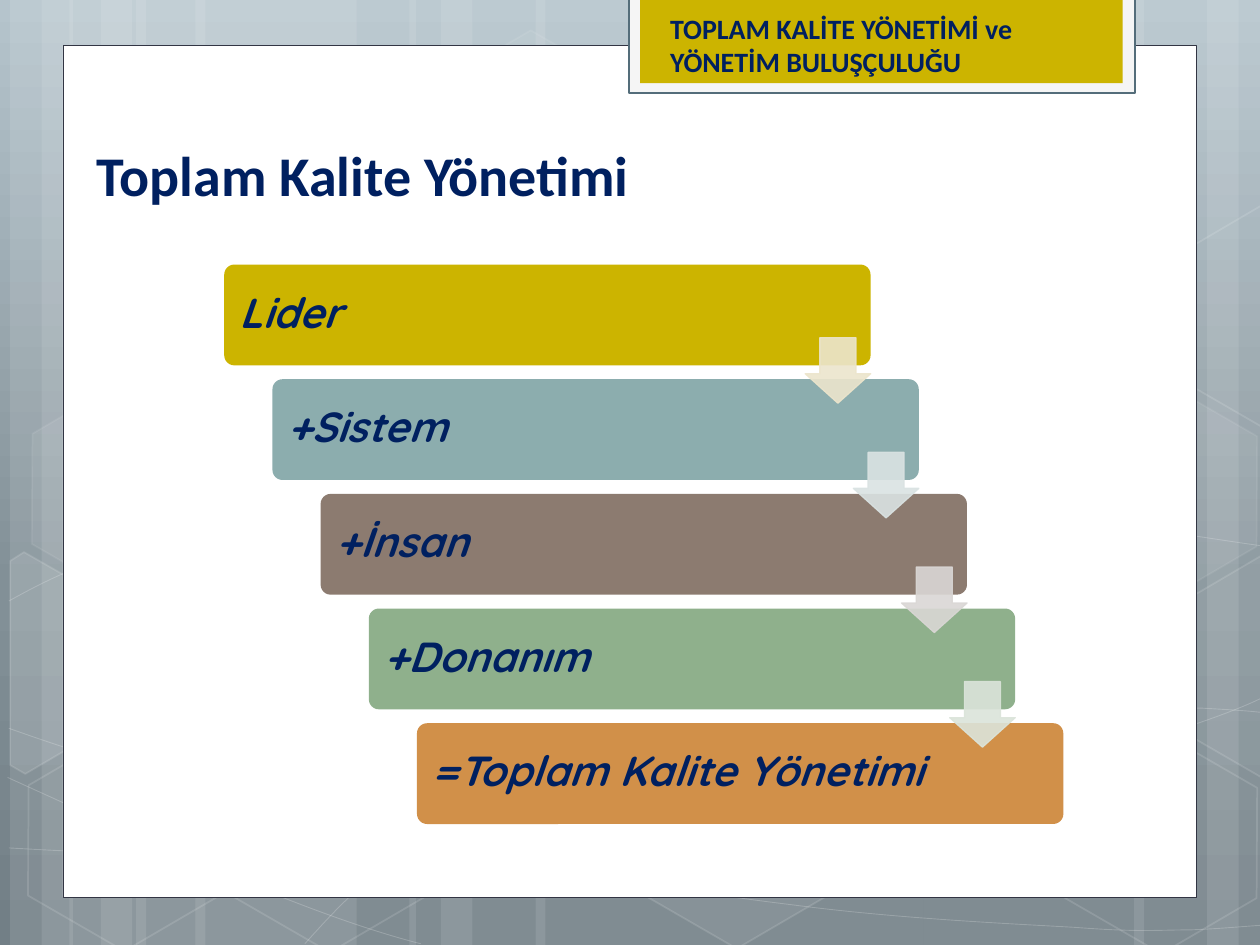
"""Build a slide with five stepped bars that add up to total quality management."""
import math
from copy import deepcopy

from lxml import etree
from pptx import Presentation
from pptx import util as u
from pptx.dml.color import RGBColor
from pptx.enum import shapes, text
from pptx.oxml.ns import qn

WIDE, HIGH = 10, 7.5
INK = {"white": "FFFFFF", "navy": "002060", "gold": "CCB400", "frame": "323543",
       "mist": "F5F5F5", "slate": "546D7A"}
SKY = [(0, "B5C4CC"), (62, "829097"), (100, "727F86")]
STEPS = [("Lider", "CCB400", "ECE5CC"),
         ("+Sistem", "8CADAE", "DAE3E3"),
         ("+İnsan", "8C7B70", "DAD7D5"),
         ("+Donanım", "8FB08C", "DBE4DA"),
         ("=Toplam Kalite Yönetimi", "D19049", None)]
HEAD = "TOPLAM KALİTE YÖNETİMİ ve YÖNETİM BULUŞÇULUĞU"
TITLE = "Toplam Kalite Yönetimi"
BANDS = [(1.08, 1.75, 0), (0.08, 0.5, 0), (0.33, 0.83, 0), (1.55, 1.75, 0), (0.55, 0.5, 0),
         (0.8, 0.83, 0), (7.33, 1.75, 180), (9.58, 0.5, 180), (9, 0.83, 180),
         (4.25, 3.08, 0), (3.25, 0.5, 0), (3.5, 0.83, 0)]
WAVES = [
    [(0.07, 6.73), (0.61, 6.76), (1.15, 6.79), (1.9, 6.78), (2.65, 6.77), (3.58, 6.75),
     (4.58, 6.65), (5.58, 6.55), (7, 6.36), (7.92, 6.17), (8.83, 5.98), (9.77, 5.68), (10.07, 5.51)],
    [(0.07, 4.77), (0.36, 4.61), (0.65, 4.46), (1.21, 4.31), (1.78, 4.16), (2.59, 3.94),
     (3.47, 3.87), (4.36, 3.8), (5.44, 3.79), (6.54, 3.87), (7.64, 3.95), (9.47, 4.26), (10.07, 4.34)],
    [(0.06, 6.17), (1.27, 6.72), (2.47, 7.27), (3.34, 7.49)],
    [(0.07, 5.78), (0.38, 5.89), (0.7, 6), (1.28, 6.16), (1.86, 6.31), (2.73, 6.56),
     (3.57, 6.73), (4.4, 6.9), (5.45, 7.08), (6.28, 7.18), (7.11, 7.29), (8, 7.33),
     (8.53, 7.36), (9.05, 7.4), (9.19, 7.38), (9.45, 7.38), (9.71, 7.37), (9.89, 7.35), (10.07, 7.34)],
    [(2.42, 7.49), (2.6, 7.29), (2.78, 7.09), (3.02, 6.91), (3.26, 6.73), (3.6, 6.53),
     (3.88, 6.39), (4.16, 6.25), (4.33, 6.19), (4.7, 6.09), (5.06, 5.99), (5.73, 5.85),
     (6.08, 5.78), (6.44, 5.71), (6.49, 5.71), (6.8, 5.69), (7.11, 5.66), (7.6, 5.63),
     (7.94, 5.62), (8.29, 5.61), (8.86, 5.62), (8.86, 5.62), (9.08, 5.62), (9.3, 5.62),
     (9.53, 5.62), (9.71, 5.63), (9.88, 5.64), (9.97, 5.65), (10.06, 5.66), (10.03, 5.65), (10.06, 5.66)]]
TILT = 30
CELLS = [(3.34, 0.36, 4, 8), (4.97, 5.89, 6, 12), (0.11, 5.91, 0, 12), (0.14, 3.12, 7, 8),
         (1.74, 5.92, 0, 12), (7.53, 4.53, 10, 12), (8.34, 5.93, 0, 12), (8.34, 3.14, 7, 8)]
CUTS = [((0.36, 5.35), 10,
         [(0.08, 4.45), (0.19, 4.38), (0.96, 4.82), (0.95, 5.7), (0.2, 6.14), (0.08, 6.07)]),
        ((9.85, 5.2), 4,
         [(9.26, 4.85), (10.01, 4.41), (10.09, 4.46), (10.09, 6.13), (10.02, 6.17), (9.26, 5.73)]),
        ((9.85, 2.41), 0,
         [(9.26, 2.07), (10.01, 1.63), (10.1, 1.68), (10.09, 3.35), (10.02, 3.39), (9.26, 2.95)])]

deck = Presentation()
deck.slide_width, deck.slide_height = u.Inches(WIDE), u.Inches(HIGH)
slide = deck.slides.add_slide(deck.slide_layouts[6])
KIND = shapes.MSO_SHAPE


def tint(fill, color, alpha):
    fill.solid()
    fill.fore_color.rgb = RGBColor.from_string(color)
    if alpha < 100:
        node = fill._xPr.find(qn("a:solidFill"))[0]
        etree.SubElement(node, qn("a:alpha")).set("val", str(alpha * 1000))


def style(shape, fill=None, alpha=100, line=None, width=1, clear=100):
    shape.shadow.inherit = False
    if fill and alpha:
        tint(shape.fill, fill, alpha)
    else:
        shape.fill.background()
    if line:
        shape.line.width = u.Pt(width)
        tint(shape.line.fill, line, clear)
    else:
        shape.line.fill.background()


def draw(kind, box, adjust=(), turn=0, **look):
    shape = slide.shapes.add_shape(kind, *map(u.Inches, box))
    for i, val in enumerate(adjust):
        shape.adjustments[i] = val
    shape.rotation = turn
    style(shape, **look)


def trace(points, close, **look):
    spots = [(u.Inches(x), u.Inches(y)) for x, y in points]
    pen = slide.shapes.build_freeform(*spots[0])
    pen.add_line_segments(spots[1:], close=close)
    shape = pen.convert_to_shape()
    style(shape, **look)
    return shape


def bend(shape):
    route = shape._element.find(".//" + qn("a:path"))
    legs = route.findall(qn("a:lnTo"))
    for k in range(0, len(legs), 3):
        curve = etree.SubElement(route, qn("a:cubicBezTo"))
        for leg in legs[k:k + 3]:
            curve.append(leg[0])
            route.remove(leg)


def spin(point, hub, angle):
    x, y = point[0] - hub[0], point[1] - hub[1]
    cos, sin = math.cos(math.radians(angle)), math.sin(math.radians(angle))
    return hub[0] + x * cos - y * sin, hub[1] + x * sin + y * cos


def write(words, box, size, font="Calibri", italic=None):
    frame = slide.shapes.add_textbox(*map(u.Inches, box)).text_frame
    frame.word_wrap = True
    frame.text = words
    face = frame.paragraphs[0].runs[0].font
    face.name, face.size, face.bold, face.italic = font, u.Pt(size), True, italic
    face.color.rgb = RGBColor.from_string(INK["navy"])
    return frame


def paint():
    fill = slide.background.fill
    fill.gradient()
    fill.gradient_angle = 270
    stops = slide._element.find(".//" + qn("a:gsLst"))
    stops.append(deepcopy(stops[-1]))
    for stop, (place, color) in zip(fill.gradient_stops, SKY):
        stop.position = place / 100
        stop.color.rgb = RGBColor.from_string(color)


def adorn():
    white = INK["white"]
    for left, width, turn in BANDS:
        draw(KIND.RECTANGLE, (left, 0, width, HIGH), turn=turn, fill=white, alpha=10)
    for wave in WAVES:
        bend(trace(wave, False, line=white, width=0.5, clear=20))
    for left, top, alpha, clear in CELLS:
        draw(KIND.HEXAGON, (left, top, 1.75, 1.52), (0.285, 1.155), TILT,
             fill=white, alpha=alpha, line=white, clear=clear)
    for hub, alpha, points in CUTS:
        flat = [spin(point, hub, -TILT) for point in points]
        trace(flat, True, fill=white, alpha=alpha, line=white, clear=12).rotation = TILT
    draw(KIND.RECTANGLE, (0.5, 0.36, 9, 6.76), fill=white, line=INK["frame"], width=0.5)
    draw(KIND.RECTANGLE, (4.99, -0.02, 4.02, 0.76), fill=INK["mist"], line=INK["slate"], width=1.25)
    draw(KIND.RECTANGLE, (5.08, -0.02, 3.83, 0.68), fill=INK["gold"])


def stack():
    left, top, width, height, head = 1.78, 2.1, 5.13, 0.8, 0.52
    across, down = (3.31 - left) / 4, 0.91
    spots = [(left + i * across, top + i * down) for i in range(len(STEPS))]
    for (x, y), (words, color, _) in zip(spots, STEPS):
        draw(KIND.ROUNDED_RECTANGLE, (x, y, width, height), (0.1,), fill=color)
        frame = write(words, (x + 0.02, y + 0.02, 4.18, 0.75), 24, "Quicksand", True)
        frame.margin_top = frame.margin_bottom = u.Inches(0.1)
        frame.vertical_anchor = text.MSO_ANCHOR.MIDDLE
        frame.paragraphs[0].line_spacing = 0.9
    for (x, y), (_, _, pale) in zip(spots[:-1], STEPS):
        draw(KIND.DOWN_ARROW, (x + width - head, y + 0.58, head, head), (0.55, 0.45),
             fill=pale, alpha=90, line=pale, width=0.75, clear=90)


paint()
adorn()
write(HEAD, (5.22, 0.04, 3.8, 0.91), 16)
stack()
write(TITLE, (0.67, 1.07, 7.8, 0.64), 32)
deck.save("out.pptx")
